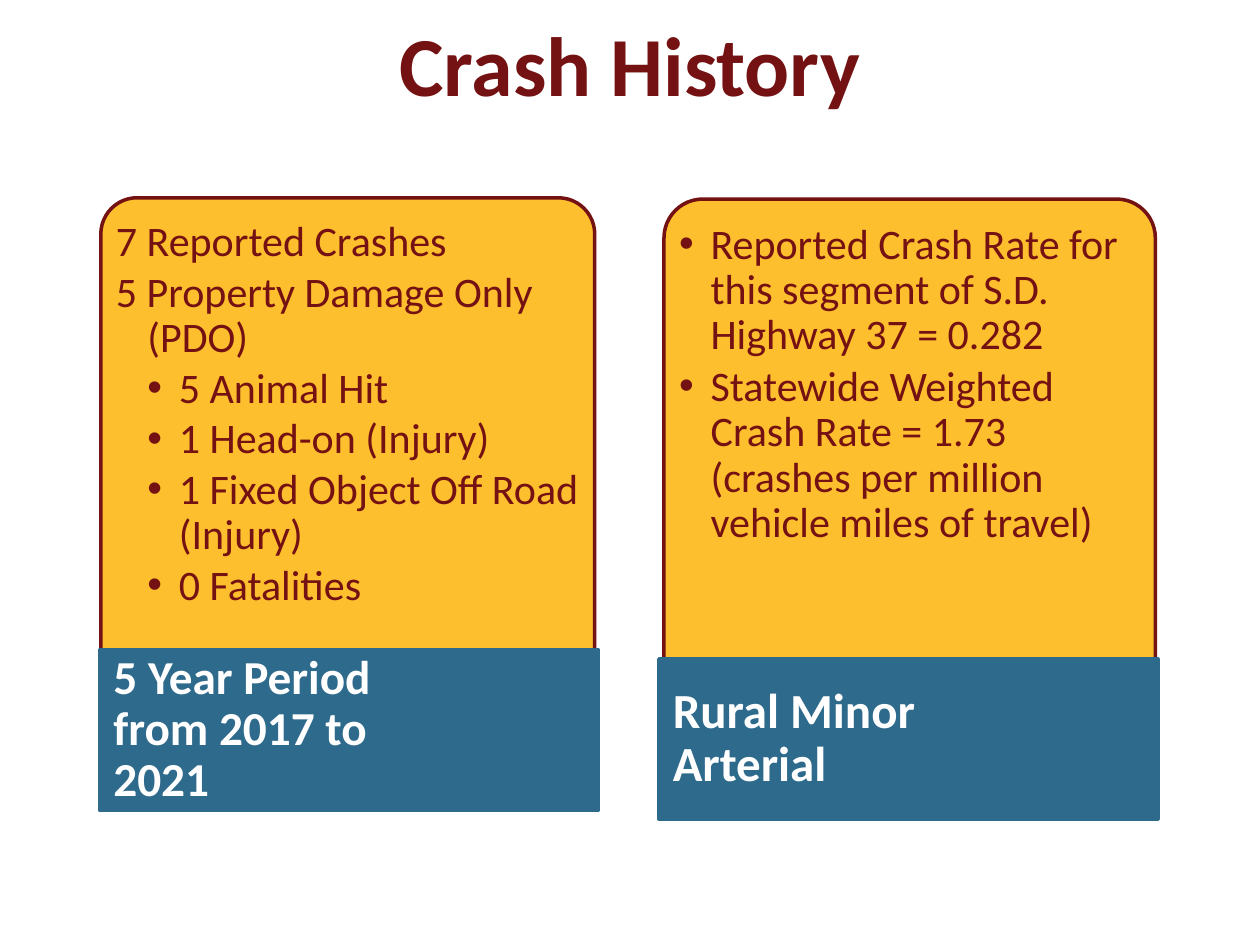
from lxml import etree
from pptx import Presentation
from pptx import util as u
from pptx.dml.color import RGBColor
from pptx.enum import shapes, text
from pptx.oxml import ns

COLORS = {"maroon": "741112", "gold": "FDB917", "blue": "2E6A8C", "white": "FFFFFF"}
COLUMNS, ROWS = 100, 75
BODY = {"size": u.Pt(24), "name": "Calibri"}
LABEL = {"name": "Calibri", "bold": True}
TITLE = {"size": u.Pt(48), "name": "Calibri", "bold": True}


class SlideBuilder:
    def __init__(self, presentation):
        self.column = presentation.slide_width / COLUMNS
        self.row = presentation.slide_height / ROWS
        self.slide = presentation.slides.add_slide(presentation.slide_layouts[5])

    def place(self, left, top, width, height):
        return [int(value) for value in (left * self.column, top * self.row,
                                         width * self.column, height * self.row)]

    def set_font(self, paragraph, color, formats):
        for name, value in formats.items():
            setattr(paragraph.font, name, value)
        paragraph.font.color.rgb = RGBColor.from_string(COLORS[color])

    def set_frame(self, frame, anchor, margins):
        formats = {"word_wrap": True, "auto_size": text.MSO_AUTO_SIZE.NONE,
                   "vertical_anchor": anchor}
        sides = ("margin_left", "margin_top", "margin_right", "margin_bottom")
        formats.update(zip(sides, map(u.Inches, margins)))
        for name, value in formats.items():
            setattr(frame, name, value)

    def title(self, words, box):
        shape = self.slide.shapes.title
        shape.left, shape.top, shape.width, shape.height = self.place(*box)
        self.set_frame(shape.text_frame, text.MSO_ANCHOR.MIDDLE, (0.1, 0.05, 0.1, 0.05))
        shape.text_frame.text = words
        paragraph = shape.text_frame.paragraphs[0]
        paragraph.alignment = text.PP_ALIGN.CENTER
        self.set_font(paragraph, "maroon", TITLE)

    def panel(self, kind, box, fill, line, opacity=100, corner=None):
        shape = self.slide.shapes.add_shape(kind, *self.place(*box))
        shape.shadow.inherit = False
        shape.fill.solid()
        shape.fill.fore_color.rgb = RGBColor.from_string(COLORS[fill])
        shape.line.color.rgb = RGBColor.from_string(COLORS[line])
        shape.line.width = u.Pt(2)
        if corner is not None:
            shape.adjustments[0], shape.adjustments[1] = corner, 0
        if opacity < 100:
            color = shape.fill._xPr.find(".//" + ns.qn("a:srgbClr"))
            etree.SubElement(color, ns.qn("a:alpha"), val=str(opacity * 1000))

    def text_box(self, box, lines, color, formats, margins,
                 anchor=text.MSO_ANCHOR.TOP, space_after=0):
        """Each line is (words, level, has_bullet); level 0 has no indent."""
        frame = self.slide.shapes.add_textbox(*self.place(*box)).text_frame
        self.set_frame(frame, anchor, margins)
        for index, (words, level, has_bullet) in enumerate(lines):
            paragraph = frame.paragraphs[0] if index == 0 else frame.add_paragraph()
            paragraph.text = words
            paragraph.level = level
            paragraph.line_spacing = 0.9
            paragraph.space_after = u.Pt(space_after)
            if level:
                properties = paragraph._p.get_or_add_pPr()
                properties.set("marL", str(u.Inches(0.25 * level)))
                properties.set("indent", str(u.Inches(-0.25)))
                if has_bullet:
                    etree.SubElement(properties, ns.qn("a:buFont"), typeface="Arial")
                    etree.SubElement(properties, ns.qn("a:buChar"), char="•")
                else:
                    etree.SubElement(properties, ns.qn("a:buNone"))
            self.set_font(paragraph, color, formats)

    def card(self, panel, body, lines, space_after, label, label_at, label_size):
        # Rounded panel with its list
        self.panel(shapes.MSO_SHAPE.ROUND_2_SAME_RECTANGLE, panel, "gold", "maroon",
                   opacity=90, corner=0.08)
        self.text_box(body, lines, "maroon", BODY, (0.03, 0.1, 0.03, 0.03),
                      space_after=space_after)
        # Label band across the foot
        self.panel(shapes.MSO_SHAPE.RECTANGLE, (*label_at, 39.6, 12.7), "blue", "blue")
        self.text_box((*label_at, 27.9, 12.7), [(label, 0, False)], "white",
                      {**LABEL, "size": u.Pt(label_size)}, (0.11, 0, 0.04, 0),
                      anchor=text.MSO_ANCHOR.MIDDLE)


def main():
    presentation = Presentation()
    presentation.slide_width, presentation.slide_height = u.Inches(10), u.Inches(7.5)
    builder = SlideBuilder(presentation)

    # Crash counts
    builder.card(
        panel=(8, 15.7, 39.2, 36), body=(8.9, 16.5, 37.5, 35.2),
        lines=[("7 Reported Crashes", 1, False),
               ("5 Property Damage Only (PDO)", 1, False),
               ("5 Animal Hit", 2, True),
               ("1 Head-on (Injury)", 2, True),
               ("1 Fixed Object Off Road (Injury)", 2, True),
               ("0 Fatalities", 2, True)],
        space_after=3, label="5 Year Period from 2017 to 2021",
        label_at=(7.9, 51.6), label_size=27)

    # Crash rates
    builder.card(
        panel=(52.7, 15.8, 39, 38.6), body=(53.6, 16.7, 37.2, 37.7),
        lines=[("Reported Crash Rate for this segment of S.D. Highway 37 = 0.282", 1, True),
               ("Statewide Weighted Crash Rate = 1.73 (crashes per million "
                "vehicle miles of travel)", 1, True)],
        space_after=3.6, label="Rural Minor Arterial",
        label_at=(52.3, 52.3), label_size=28)

    # Title
    builder.title("Crash History", (5, 0, 90, 10))
    presentation.save("out.pptx")


if __name__ == "__main__":
    main()
